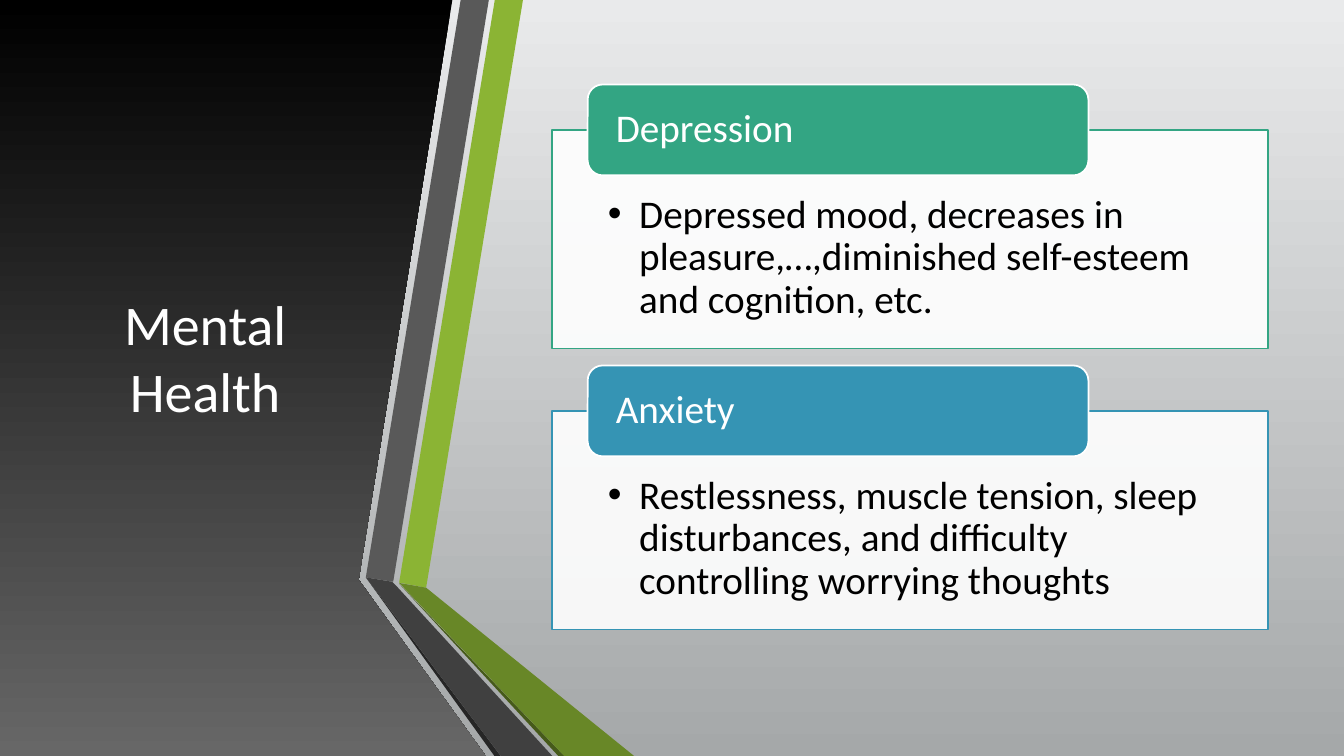
"""Build the Mental Health slide: a dark title panel, angled ribbons and two symptom cards."""
from dataclasses import dataclass

from lxml.etree import SubElement
from pptx import Presentation
from pptx.dml.color import RGBColor
from pptx.dml.fill import FillFormat
from pptx.enum.shapes import MSO_SHAPE
from pptx.enum.text import MSO_ANCHOR, MSO_AUTO_SIZE, PP_ALIGN
from pptx.oxml.ns import qn
from pptx.shapes.autoshape import Shape
from pptx.slide import Slide
from pptx.text.text import _Paragraph
from pptx.util import Cm, Pt

FONT = "Calibri"
WHITE = RGBColor(0xFF, 0xFF, 0xFF)
BLACK = RGBColor(0x00, 0x00, 0x00)
PANEL_GREY = RGBColor(0x67, 0x67, 0x67)
BACK_TOP = RGBColor(0xE9, 0xEA, 0xEB)
BACK_BOTTOM = RGBColor(0xA5, 0xA8, 0xA9)
LIME = RGBColor(0x8B, 0xB4, 0x34)
OLIVE = RGBColor(0x68, 0x87, 0x27)
DARK_OLIVE = RGBColor(0x46, 0x5A, 0x1A)
GREY = RGBColor(0x59, 0x59, 0x59)
DARK_GREY = RGBColor(0x40, 0x40, 0x40)
CHARCOAL = RGBColor(0x26, 0x26, 0x26)
GREEN = RGBColor(0x33, 0xA5, 0x83)
BLUE = RGBColor(0x35, 0x94, 0xB4)

SLIDE_WIDTH, SLIDE_HEIGHT = 33.87, 19.05
CARD_TOP, CARD_PITCH = 2.13, 7.08
HEADING_LEFT, HEADING_WIDTH, HEADING_HEIGHT = 14.81, 12.62, 2.29
BODY_LEFT, BODY_WIDTH, BODY_HEIGHT = 13.92, 18.03, 5.51
BULLET_INDENT = 0.79

Points = list[tuple[float, float]]


@dataclass
class Ribbon:
    """A coloured outline with corners in centimetres."""
    color: RGBColor
    corners: Points


@dataclass
class Card:
    """A condition with its symptoms and accent colour."""
    condition: str
    symptoms: str
    accent: RGBColor


PANEL: Points = [(0, 0), (11.4, 0), (9.04, 14.61), (12.24, SLIDE_HEIGHT), (0, SLIDE_HEIGHT)]
RIBBONS = [
    Ribbon(LIME, [(10.06, 14.68), (10.74, 14.81), (13.18, 0), (12.47, 0)]),
    Ribbon(GREY, [(12.32, 0), (11.61, 0), (9.22, 14.55), (9.91, 14.66)]),
    Ribbon(CHARCOAL, [(9.22, 14.55), (12.46, SLIDE_HEIGHT), (12.62, SLIDE_HEIGHT)]),
    Ribbon(DARK_OLIVE, [(10.06, 14.71), (14.07, SLIDE_HEIGHT), (14.22, SLIDE_HEIGHT)]),
    Ribbon(OLIVE, [(10.06, 14.69), (14.22, SLIDE_HEIGHT), (15.98, SLIDE_HEIGHT), (10.74, 14.81)]),
    Ribbon(DARK_GREY, [(13.92, SLIDE_HEIGHT), (10.03, 14.81), (9.88, 14.66), (9.22, 14.55),
                       (12.62, SLIDE_HEIGHT)]),
]
CARDS = [
    Card("Depression",
         "Depressed mood, decreases in pleasure,…,diminished self-esteem and cognition, etc.", GREEN),
    Card("Anxiety",
         "Restlessness, muscle tension, sleep disturbances, and difficulty controlling worrying thoughts",
         BLUE),
]


def fill_downward(fill: FillFormat, top: RGBColor, bottom: RGBColor) -> None:
    """Fill with a gradient running from top to bottom."""
    fill.gradient()
    fill.gradient_angle = 270
    for stop, color in zip(fill.gradient_stops, (top, bottom)):
        stop.color.rgb = color


def add_outline(slide: Slide, corners: Points) -> Shape:
    """Draw a closed, borderless polygon."""
    start, *rest = [(Cm(x), Cm(y)) for x, y in corners]
    builder = slide.shapes.build_freeform(*start)
    builder.add_line_segments(rest, close=True)
    outline = builder.convert_to_shape()
    outline.shadow.inherit = False
    outline.line.fill.background()
    return outline


def add_box(slide: Slide, kind: MSO_SHAPE, bounds: tuple[float, ...], fill: RGBColor,
            border: RGBColor, insets: tuple[float, ...], anchor: MSO_ANCHOR) -> Shape:
    """Draw a bordered box with its text area set up."""
    box = slide.shapes.add_shape(kind, *(Cm(length) for length in bounds))
    box.shadow.inherit = False
    box.fill.solid()
    box.fill.fore_color.rgb = fill
    box.line.color.rgb = border
    box.line.width = Pt(1.25)
    frame = box.text_frame
    frame.word_wrap = True
    frame.vertical_anchor = anchor
    frame.margin_left, frame.margin_top, frame.margin_right, frame.margin_bottom = map(Cm, insets)
    return box


def write(paragraph: _Paragraph, text: str, size: int, color: RGBColor,
          align: PP_ALIGN = PP_ALIGN.LEFT, spacing: float = 0.9) -> None:
    """Put formatted text into a paragraph."""
    paragraph.text = text
    paragraph.alignment = align
    paragraph.line_spacing = spacing
    paragraph.font.name = FONT
    paragraph.font.size = Pt(size)
    paragraph.font.color.rgb = color


def add_bullet(paragraph: _Paragraph) -> None:
    """Give a paragraph a hanging round bullet."""
    properties = paragraph._p.get_or_add_pPr()
    properties.set("marL", str(Cm(BULLET_INDENT)))
    properties.set("indent", str(-Cm(BULLET_INDENT)))
    SubElement(properties, qn("a:buFont"), typeface="Arial")
    SubElement(properties, qn("a:buChar"), char="•")


def add_card(slide: Slide, card: Card, top: float) -> None:
    """Draw a symptom box with its heading over the upper edge."""
    body = add_box(slide, MSO_SHAPE.RECTANGLE,
                   (BODY_LEFT, top + HEADING_HEIGHT / 2, BODY_WIDTH, BODY_HEIGHT),
                   WHITE, card.accent, (1.4, 1.63, 1.4, 0.56), MSO_ANCHOR.TOP)
    color = body.fill._xPr.find(qn("a:solidFill")).find(qn("a:srgbClr"))
    SubElement(color, qn("a:alpha"), val="90000")
    symptoms = body.text_frame.paragraphs[0]
    symptoms.level = 1
    add_bullet(symptoms)
    write(symptoms, card.symptoms, 28, BLACK)

    heading = add_box(slide, MSO_SHAPE.ROUNDED_RECTANGLE,
                      (HEADING_LEFT, top, HEADING_WIDTH, HEADING_HEIGHT),
                      card.accent, WHITE, (0.6, 0, 0.6, 0), MSO_ANCHOR.MIDDLE)
    write(heading.text_frame.paragraphs[0], card.condition, 28, WHITE)


def add_title(slide: Slide) -> None:
    """Place the title on the dark panel."""
    title = slide.shapes.title
    title.left, title.top, title.width, title.height = map(Cm, (1.5, 1.91, 7.34, 14.17))
    frame = title.text_frame
    frame.word_wrap = True
    frame.auto_size = MSO_AUTO_SIZE.NONE
    frame.vertical_anchor = MSO_ANCHOR.MIDDLE
    write(frame.paragraphs[0], "Mental Health", 40, WHITE, PP_ALIGN.CENTER, 1.0)


def main() -> None:
    """Assemble and save the slide."""
    presentation = Presentation()
    presentation.slide_width, presentation.slide_height = Cm(SLIDE_WIDTH), Cm(SLIDE_HEIGHT)
    slide = presentation.slides.add_slide(presentation.slide_layouts[5])
    fill_downward(slide.background.fill, BACK_TOP, BACK_BOTTOM)
    panel = add_outline(slide, PANEL)
    fill_downward(panel.fill, BLACK, PANEL_GREY)
    title_element = slide.shapes.title._element
    panel._element.addnext(title_element)
    add_title(slide)
    for ribbon in RIBBONS:
        outline = add_outline(slide, ribbon.corners)
        outline.fill.solid()
        outline.fill.fore_color.rgb = ribbon.color
    for index, card in enumerate(CARDS):
        add_card(slide, card, CARD_TOP + index * CARD_PITCH)
    presentation.save("out.pptx")


if __name__ == "__main__":
    main()
